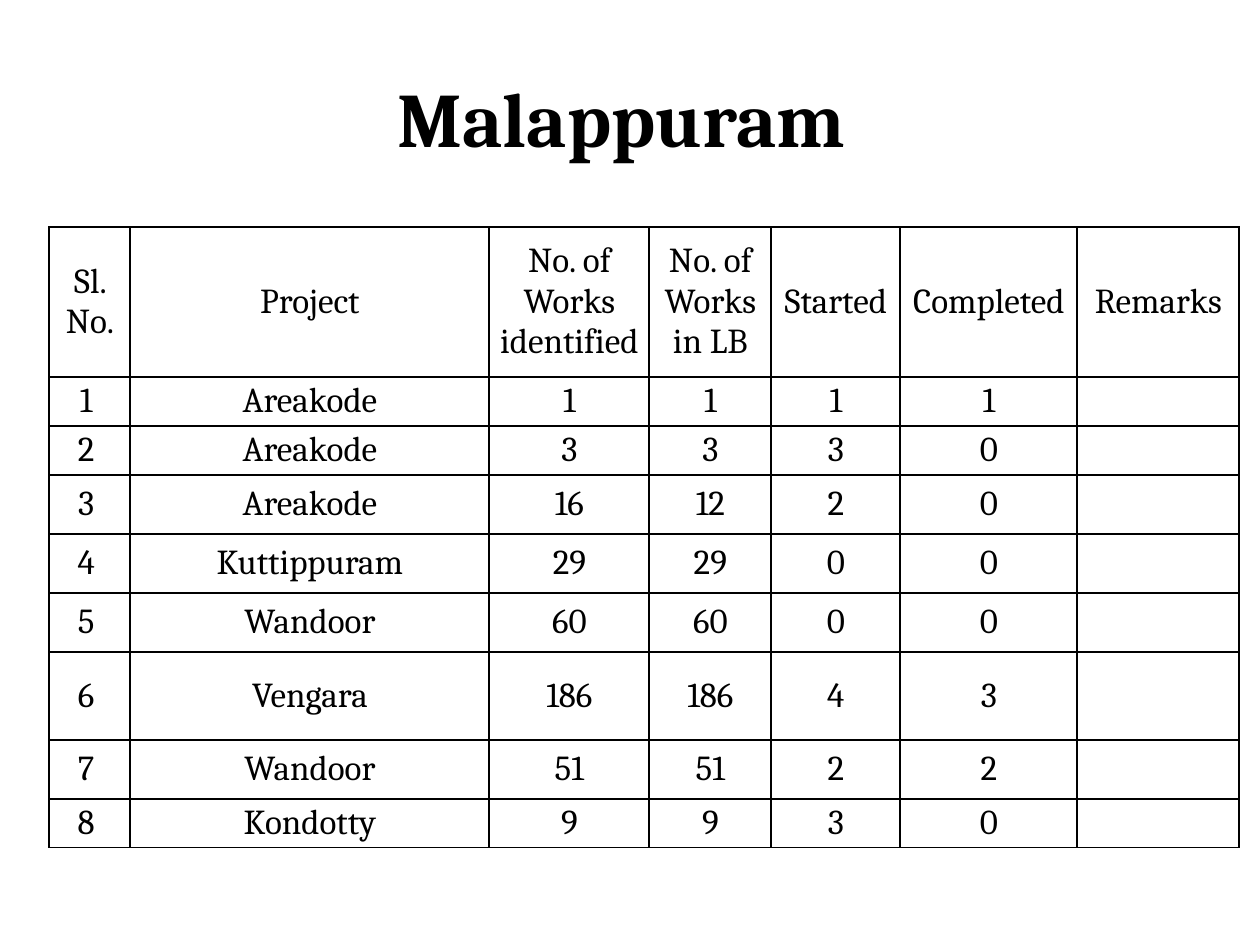
from pptx import Presentation
from pptx.dml.color import RGBColor
from pptx.enum.text import MSO_ANCHOR, PP_ALIGN
from pptx.oxml import parse_xml
from pptx.oxml.ns import nsdecls
from pptx.util import Pt

PX = 914400 // 126
BLACK = RGBColor(0, 0, 0)
WHITE = RGBColor(255, 255, 255)
FONT = "Cambria"
CENTER = PP_ALIGN.CENTER
MIDDLE = MSO_ANCHOR.MIDDLE

COL_WIDTHS = [81, 359, 160, 122, 129, 177, 162]
ROW_HEIGHTS = [150, 49, 49, 59, 59, 59, 88, 59, 49]
HEADERS = ["Sl. No.", "Project", "No. of Works identified",
           "No. of Works in LB", "Started", "Completed", "Remarks"]
# Project, works identified, works in LB, started, completed
PROJECTS = [
    ("Areakode", 1, 1, 1, 1),
    ("Areakode", 3, 3, 3, 0),
    ("Areakode", 16, 12, 2, 0),
    ("Kuttippuram", 29, 29, 0, 0),
    ("Wandoor", 60, 60, 0, 0),
    ("Vengara", 186, 186, 4, 3),
    ("Wandoor", 51, 51, 2, 2),
    ("Kondotty", 9, 9, 3, 0),
]


def px(n):
    return n * PX


class SlideBuilder:
    def __init__(self, slide):
        self.s = slide

    def run(self, p, text, size, bold=False):
        p.alignment = CENTER
        r = p.add_run()
        r.text = text
        r.font.name = FONT
        r.font.size = Pt(size)
        r.font.bold = bold
        r.font.color.rgb = BLACK

    def title(self, text, x, y, w, h):
        sp = self.s.shapes.add_textbox(px(x), px(y), px(w), px(h))
        tf = sp.text_frame
        tf.word_wrap = True
        tf.vertical_anchor = MIDDLE
        self.run(tf.paragraphs[0], text, 44, bold=True)

    def borders(self, cell):
        tc_pr = cell._tc.get_or_add_tcPr()
        for i, side in enumerate(("lnL", "lnR", "lnT", "lnB")):
            tc_pr.insert(i, parse_xml(
                f'<a:{side} {nsdecls("a")} w="{Pt(1)}"><a:solidFill>'
                f'<a:srgbClr val="{BLACK}"/></a:solidFill></a:{side}>'))

    def cell(self, cell, text):
        cell.fill.solid()
        cell.fill.fore_color.rgb = WHITE
        cell.vertical_anchor = MIDDLE
        cell.margin_left = cell.margin_right = px(8)
        cell.margin_top = cell.margin_bottom = 0
        self.borders(cell)
        if text:
            p = cell.text_frame.paragraphs[0]
            p.space_after = Pt(10)
            p._p.get_or_add_pPr().set("marL", str(px(1)))
            self.run(p, text, 20)

    def table(self, rows, x, y, widths, heights):
        frame = self.s.shapes.add_table(len(rows), len(widths), px(x), px(y),
                                        px(sum(widths)), px(sum(heights)))
        table = frame.table
        for col, w in zip(table.columns, widths):
            col.width = px(w)
        for row, h, texts in zip(table.rows, heights, rows):
            row.height = px(h)
            for cell, text in zip(row.cells, texts):
                self.cell(cell, text)


def main():
    prs = Presentation()
    prs.slide_width, prs.slide_height = px(1260), px(945)
    slide = SlideBuilder(prs.slides.add_slide(prs.slide_layouts[6]))

    # Title
    slide.title("Malappuram ", 63, 38, 1134, 158)

    # Works table, with numbered rows and empty remarks
    rows = [HEADERS]
    for n, project in enumerate(PROJECTS, 1):
        rows.append([f"{n} ", *map(str, project), ""])
    slide.table(rows, 49, 227, COL_WIDTHS, ROW_HEIGHTS)

    prs.save("out.pptx")


if __name__ == "__main__":
    main()
